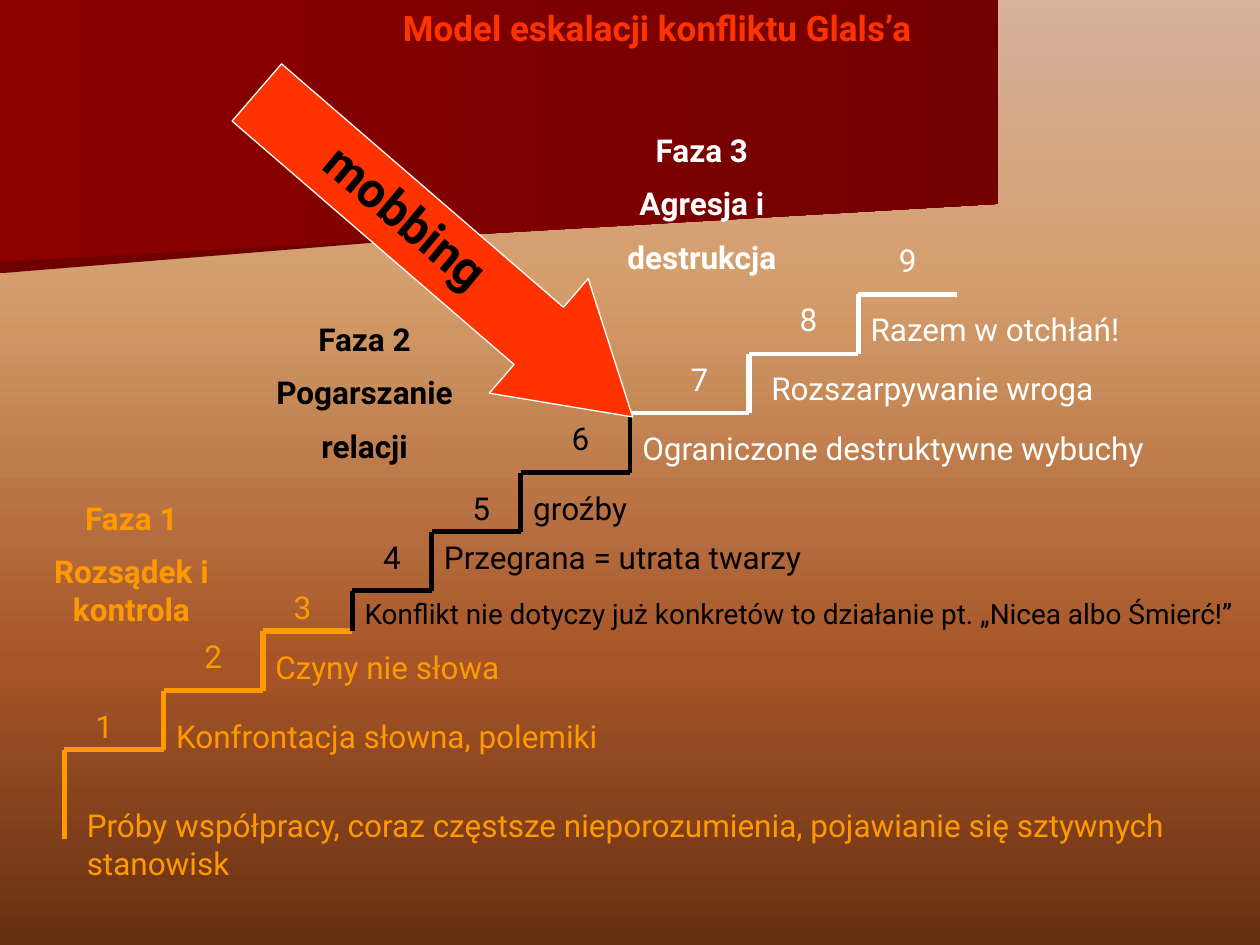
import pptx
import pptx.util
import pptx.dml.color
import pptx.enum.shapes
import pptx.enum.text
import pptx.oxml
import pptx.oxml.ns

Cm = pptx.util.Cm
Pt = pptx.util.Pt
ALIGN = pptx.enum.text.PP_ALIGN

FONT = "Roboto"
ORANGE, BLACK, WHITE, RED = "FF9900", "000000", "FFFFFF", "FF3300"

BACKGROUND = [(0, "D6B19C"), (30, "D49E6C"), (70, "A65528"), (100, "663012")]
BANNERS = [
    ([(19.76, 3.89), (0, 5.51), (0, 2.57), (19.79, 2.57)], [(0, "6F0000"), (100, "720000")]),
    ([(20.12, 4.11), (0, 5.28), (0, 0), (20.12, 0)], [(0, "8C0000"), (100, "720000")]),
]

STAIR_BOTTOM, STAIR_END = 16.92, 19.3
# x, y, tread colour, tread width, riser colour, riser width
STEPS = [
    (1.3, 15.11, ORANGE, 3, ORANGE, 3),
    (3.3, 13.92, ORANGE, 3, ORANGE, 3),
    (5.3, 12.72, ORANGE, 3, ORANGE, 3),
    (7.1, 11.91, BLACK, 3, BLACK, 3),
    (8.7, 10.72, BLACK, 3, BLACK, 3),
    (10.5, 9.53, BLACK, 3, BLACK, 3),
    (12.7, 8.33, WHITE, 2.25, BLACK, 2.25),
    (15.1, 7.13, WHITE, 2.25, WHITE, 3),
    (17.3, 5.93, WHITE, 3, WHITE, 3),
]
NUMBERS = [(1.3, 14.12), (3.5, 12.72), (5.3, 11.73), (7.1, 10.72), (8.9, 9.73),
           (10.9, 8.33), (13.3, 7.13), (15.5, 5.93), (17.5, 4.73)]
LABELS = [
    (1.5, 16.13, 23.6, 18, "Próby współpracy, coraz częstsze nieporozumienia, pojawianie się sztywnych stanowisk"),
    (3.3, 14.33, 21.6, 18, "Konfrontacja słowna, polemiki"),
    (5.3, 12.93, 19, 18, "Czyny nie słowa"),
    (7.1, 11.91, 18.3, 16, "Konflikt nie dotyczy już konkretów to działanie pt. „Nicea albo Śmierć!”"),
    (8.7, 10.72, 15.2, 18, "Przegrana = utrata twarzy"),
    (10.5, 9.73, 14.2, 18, "groźby"),
    (12.7, 8.53, 12, 18, "Ograniczone destruktywne wybuchy"),
    (15.3, 7.32, 7.9, 18, "Rozszarpywanie wroga"),
    (17.3, 6.12, 8.1, 18, "Razem w otchłań!"),
]
PHASES = [
    (0, 9.93, 2.92, ORANGE, ["Faza 1", "Rozsądek i kontrola"]),
    (4.7, 6.32, 3.3, BLACK, ["Faza 2", "Pogarszanie", "relacji"]),
    (11.5, 2.51, 3.3, WHITE, ["Faza 3", "Agresja i", "destrukcja"]),
]


def rgb(color):
    return pptx.dml.color.RGBColor.from_string(color)


def set_gradient(fill, element, stops, angle):
    fill.gradient()
    fill.gradient_angle = angle
    gs_list = element.xpath(".//a:gsLst")[0]
    for gs in list(gs_list):
        gs_list.remove(gs)
    ns = pptx.oxml.ns.nsdecls("a")
    for pos, color in stops:
        gs_list.append(pptx.oxml.parse_xml(
            f'<a:gs {ns} pos="{pos * 1000}"><a:srgbClr val="{color}"/></a:gs>'))


def add_banner(s, points, stops):
    corners = [(Cm(x), Cm(y)) for x, y in points]
    builder = s.shapes.build_freeform(*corners[0])
    builder.add_line_segments(corners[1:], close=True)
    sp = builder.convert_to_shape()
    sp.shadow.inherit = False
    sp.line.fill.background()
    set_gradient(sp.fill, sp._element, stops, 0)


def add_line(s, x1, y1, x2, y2, color, width):
    line = s.shapes.add_connector(pptx.enum.shapes.MSO_CONNECTOR.STRAIGHT,
                                  Cm(x1), Cm(y1), Cm(x2), Cm(y2))
    line.line.color.rgb = rgb(color)
    line.line.width = Pt(width)
    line._element.spPr.append(
        pptx.oxml.parse_xml(f'<a:effectLst {pptx.oxml.ns.nsdecls("a")}/>'))


def write(tf, texts, size, color, bold=False, align=ALIGN.LEFT):
    tf.word_wrap = True
    tf.vertical_anchor = pptx.enum.text.MSO_ANCHOR.TOP
    for i, text in enumerate(texts):
        p = tf.add_paragraph() if i else tf.paragraphs[0]
        p.alignment = align
        p.space_before = Pt(size / 2 if i else 0)
        r = p.add_run()
        r.text = text
        r.font.name = FONT
        r.font.size = Pt(size)
        r.font.bold = bold
        r.font.color.rgb = rgb(color)


def add_text(s, x, y, w, h, texts, size, color, bold=False, align=ALIGN.LEFT):
    sp = s.shapes.add_textbox(Cm(x), Cm(y), Cm(w), Cm(h))
    write(sp.text_frame, texts, size, color, bold, align)
    return sp


def add_stairs(s):
    below = STAIR_BOTTOM
    ends = [step[0] for step in STEPS[1:]] + [STAIR_END]
    for (x, y, tread, tread_w, riser, riser_w), end in zip(STEPS, ends):
        add_line(s, x, below, x, y, riser, riser_w)
        add_line(s, x, y, end, y, tread, tread_w)
        below = y


def add_arrow(s):
    sp = s.shapes.add_shape(pptx.enum.shapes.MSO_SHAPE.UP_ARROW,
                            Cm(7.44), Cm(0.13), Cm(3.05), Cm(10.01))
    sp.rotation = 130.8
    sp.adjustments[0] = 0.5
    sp.adjustments[1] = 0.82
    sp.shadow.inherit = False
    sp.fill.solid()
    sp.fill.fore_color.rgb = rgb(RED)
    sp.line.color.rgb = rgb(WHITE)
    sp.line.width = Pt(0.75)
    caption = add_text(s, 5.89, 3.94, 5.38, 1.45, ["mobbing"], 28, BLACK, True)
    caption.rotation = 39.8


def add_title(s, text):
    sp = s.shapes.title
    sp.left, sp.top, sp.width, sp.height = Cm(1.1), Cm(0), Cm(24.3), Cm(1.1)
    write(sp.text_frame, [text], 20, RED, True, ALIGN.CENTER)
    sp.text_frame.auto_size = pptx.enum.text.MSO_AUTO_SIZE.NONE
    s.shapes._spTree.append(sp._element)


def main():
    prs = pptx.Presentation()
    prs.slide_width, prs.slide_height = Cm(25.4), Cm(19.05)
    s = prs.slides.add_slide(prs.slide_layouts[5])
    set_gradient(s.background.fill, s._element, BACKGROUND, 270)
    for points, stops in BANNERS:
        add_banner(s, points, stops)
    add_stairs(s)
    for i, (x, y) in enumerate(NUMBERS):
        add_text(s, x, y, 1.6, 1.02, [str(i + 1)], 18, STEPS[i][2], align=ALIGN.CENTER)
    for x, y, h, color, texts in PHASES:
        add_text(s, x, y, 5.3, h, texts, 18, color, True, ALIGN.CENTER)
    add_arrow(s)
    for (x, y, w, size, text), step in zip(LABELS, STEPS):
        h = 1.78 if step is STEPS[0] else 1.02
        add_text(s, x, y, w, h, [text], size, step[2])
    add_title(s, "Model eskalacji konfliktu Glals’a")
    prs.save("out.pptx")


if __name__ == "__main__":
    main()
